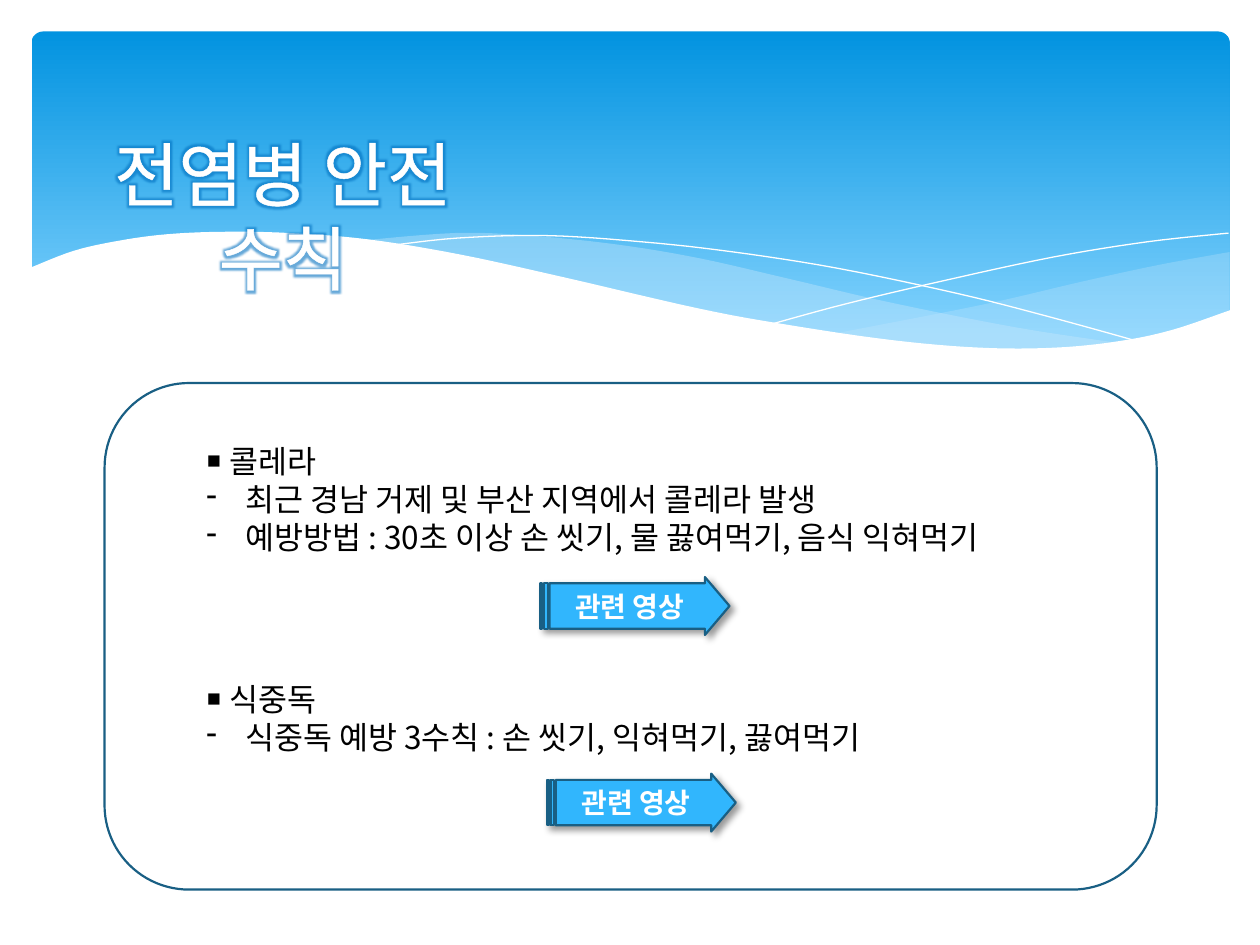
"""Build the infectious disease safety slide on a grid of 100 columns by 75 rows."""
from lxml import etree
from pptx import Presentation
from pptx.dml.color import RGBColor
from pptx.enum.shapes import MSO_SHAPE
from pptx.enum.text import MSO_ANCHOR, PP_ALIGN
from pptx.oxml import parse_xml
from pptx.oxml.ns import qn
from pptx.util import Inches, Pt

ROUNDED = MSO_SHAPE.ROUNDED_RECTANGLE
ARROW = MSO_SHAPE.STRIPED_RIGHT_ARROW
CENTER, TOP, MIDDLE = PP_ALIGN.CENTER, MSO_ANCHOR.TOP, MSO_ANCHOR.MIDDLE
DRAWING = 'xmlns:a="http://schemas.openxmlformats.org/drawingml/2006/main"'
STEPS = 6

deck = Presentation()
deck.slide_width, deck.slide_height = Inches(10), Inches(7.5)
cell = deck.slide_width // 100
page = deck.slides.add_slide(deck.slide_layouts[5])


def paint(shape, fill=None, line=None, width=0, opacity=100):
    """Set the fill, line and opacity of a shape without a shadow."""
    shape.shadow.inherit = False
    if fill:
        shape.fill.solid()
        shape.fill.fore_color.rgb = RGBColor.from_string(fill)
        if opacity < 100:
            color = shape.fill._xPr.find(qn("a:solidFill"))[0]
            etree.SubElement(color, qn("a:alpha"), val=str(opacity * 1000))
    else:
        shape.fill.background()
    if line:
        shape.line.color.rgb = RGBColor.from_string(line)
        shape.line.width = Pt(width)
    else:
        shape.line.fill.background()


def smooth(knots):
    """Return points of a Catmull-Rom curve through the knots."""
    padded = [knots[0], *knots, knots[-1]]
    points = [knots[0]]
    for a, b, c, d in zip(padded, padded[1:], padded[2:], padded[3:]):
        for step in range(1, STEPS + 1):
            t = step / STEPS
            points.append(tuple(
                (2 * q + (r - p) * t + (2 * p - 5 * q + 4 * r - s) * t ** 2
                 + (3 * q - p - 3 * r + s) * t ** 3) / 2
                for p, q, r, s in zip(a, b, c, d)))
    return points


banner = page.shapes.add_shape(ROUNDED, *[round(n * cell) for n in (2.5, 2.5, 95.1, 27)])
paint(banner)
banner.adjustments[0] = 0.034
banner.fill.gradient()
banner.fill.gradient_angle = 270
for stop, (position, color) in zip(banner.fill.gradient_stops, [(0, "0293E0"), (0.9, "83D3FE")]):
    stop.position = position
    stop.color.rgb = RGBColor.from_string(color)

waves = [
    ([[(97.6, 20), (92.1, 21), (86.1, 22.3), (77.9, 24.2), (66.1, 26.5)],
      [(66.1, 26.5), (73.2, 27.4), (81.4, 27.8), (88.1, 27.3), (93.5, 26.2), (97.6, 24.7)]],
     {"fill": "C6E7FC", "opacity": 29}),
    ([[(89.3, 27.3), (80.7, 26), (70.6, 24), (62.9, 22.2), (55.5, 20.5), (48.9, 19.4),
       (42, 18.7), (36.1, 18.5), (28.6, 19.1)],
      [(28.6, 19.1), (36.2, 20.3), (44.9, 22.2), (56.6, 24.8), (66.5, 26.6),
       (73.6, 27.5), (80.7, 27.8), (89.3, 27.3)]],
     {"fill": "C6E7FC", "opacity": 40}),
    ([[(30.9, 19.5), (36.3, 18.9), (43.3, 18.7), (51, 19.2), (58.2, 20), (66.5, 21.3),
       (76, 23.3), (83.1, 25.1), (90.7, 27.2)]], {"line": "FFFFFF"}),
    ([[(61.3, 25.7), (67.2, 24.1), (74.8, 22.3), (83.6, 20.4), (91, 19.2), (97.5, 18.5)]],
     {"line": "FFFFFF"}),
    ([[(97.7, 24.6), (93, 26.2), (88.7, 27.1), (83.7, 27.6), (77.8, 27.6), (70.8, 27),
       (62.6, 25.8), (55.5, 24.5), (44.7, 22), (36.5, 20.2), (29.2, 19), (23, 18.5),
       (17.7, 18.4), (13.2, 18.6), (9.5, 19.1), (5.9, 19.9), (2.3, 21.3)],
      [(2.3, 32.9), (97.7, 32.9)]], {"fill": "FFFFFF"}),
]
for curves, style in waves:
    points = [(x * cell, y * cell) for knots in curves for x, y in smooth(knots)]
    builder = page.shapes.build_freeform(*points[0])
    builder.add_line_segments(points[1:], close="fill" in style)
    paint(builder.convert_to_shape(), **style)

title = page.shapes.title
page.shapes.element.append(title.element)
title.left, title.top, title.width, title.height = [
    round(n * cell) for n in (6.7, 9.9, 31.5, 14.4)]
title.text_frame.text = "전염병 안전 수칙"
title.text_frame.vertical_anchor = TOP
title.text_frame.word_wrap = True
para = title.text_frame.paragraphs[0]
para.alignment = CENTER
span = para.runs[0]
span.font.size, span.font.name = Pt(40), "Arial"
span.font.color.rgb = RGBColor.from_string("FFFFFF")
properties = span.font._element
properties.insert(0, parse_xml(
    f'<a:ln {DRAWING} w="18415"><a:solidFill><a:srgbClr val="FFFFFF"/></a:solidFill></a:ln>'))
properties.insert(2, parse_xml(
    f'<a:effectLst {DRAWING}><a:glow rad="63500"><a:srgbClr val="0070C0">'
    '<a:alpha val="60000"/></a:srgbClr></a:glow></a:effectLst>'))

sections = [
    ((15.4, 34.6, 71.8, 10.1), "￭ 콜레라",
     ["최근 경남 거제 및 부산 지역에서 콜레라 발생",
      "예방방법 : 30초 이상 손 씻기, 물 끓여먹기, 음식 익혀먹기"], (42.9, 45.8)),
    ((15.4, 53.5, 60.9, 7.1), "￭ 식중독",
     ["식중독 예방 3수칙 : 손 씻기, 익혀먹기, 끓여먹기"], (43.4, 61.4)),
]
for place, heading, rules, corner in sections:
    box = page.shapes.add_textbox(*[round(n * cell) for n in place])
    box.text_frame.word_wrap = False
    box.text_frame.text = "\n".join([heading, *rules])
    for index, para in enumerate(box.text_frame.paragraphs):
        font = para.runs[0].font
        font.size, font.name = Pt(18), "Noto Sans CJK KR"
        font.color.rgb = RGBColor.from_string("000000")
        if index:
            layout = para._p.get_or_add_pPr()
            layout.set("marL", str(Inches(0.31)))
            layout.set("indent", str(-Inches(0.31)))
            etree.SubElement(layout, qn("a:buChar"), char="-")

    button = page.shapes.add_shape(ARROW, *[round(n * cell) for n in (*corner, 15, 4.6)])
    paint(button, "31B6FD", "195F84", 1.25)
    button.adjustments[0], button.adjustments[1] = 0.783, 0.424
    button.element.spPr.find(qn("a:effectLst")).append(parse_xml(
        f'<a:outerShdw {DRAWING} blurRad="50800" dist="38100" dir="2700000" algn="tl" '
        'rotWithShape="0"><a:srgbClr val="000000"><a:alpha val="40000"/></a:srgbClr>'
        '</a:outerShdw>'))
    button.text_frame.text = "관련 영상"
    button.text_frame.vertical_anchor = MIDDLE
    para = button.text_frame.paragraphs[0]
    para.alignment = CENTER
    font = para.runs[0].font
    font.size, font.name, font.bold = Pt(16), "Calibri", True
    font.color.rgb = RGBColor.from_string("FFFFFF")

frame = page.shapes.add_shape(ROUNDED, *[round(n * cell) for n in (8.3, 30.4, 83.5, 40.2)])
paint(frame, line="195F84", width=1.25)

deck.save("out.pptx")
